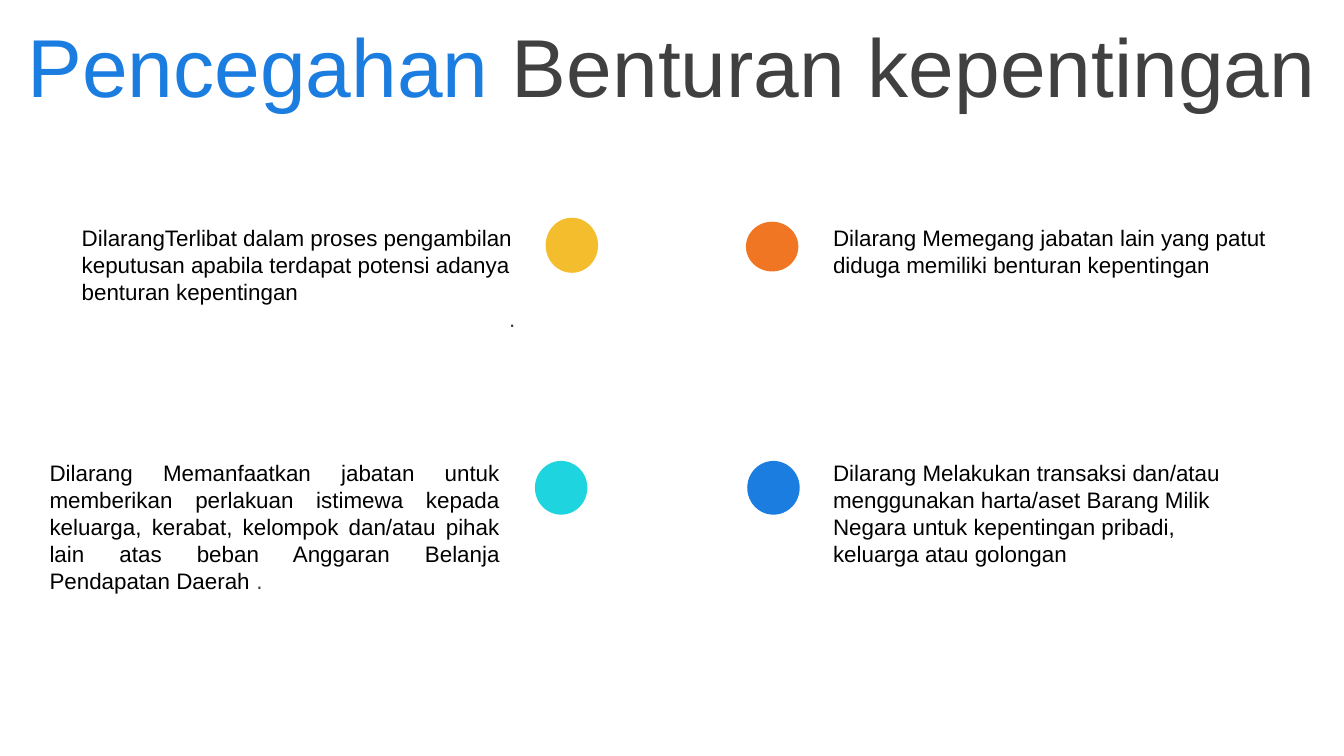
from pptx import Presentation
from pptx.dml.color import RGBColor
from pptx.enum.shapes import MSO_SHAPE
from pptx.enum.text import MSO_ANCHOR, MSO_AUTO_SIZE, PP_ALIGN
from pptx.util import Inches, Pt

LEFT, CENTER, RIGHT, JUSTIFY = PP_ALIGN.LEFT, PP_ALIGN.CENTER, PP_ALIGN.RIGHT, PP_ALIGN.JUSTIFY
MIDDLE, TOP = MSO_ANCHOR.MIDDLE, MSO_ANCHOR.TOP
GROW, FIXED = MSO_AUTO_SIZE.SHAPE_TO_FIT_TEXT, MSO_AUTO_SIZE.NONE
OVAL = MSO_SHAPE.OVAL

THEME = {
    "font": "Arial", "title": 44, "body": 12,
    "blue": "1C7DE1", "dark": "404040", "black": "000000",
    "yellow": "F4BD2D", "orange": "F07624", "cyan": "1ED4DE",
}

TITLE = [(CENTER, [("Pencegahan ", "blue"), ("Benturan kepentingan", "dark")])]

RULES = [
    {"box": (0.51, 1.62, 3.47, 0.91), "dot": (4.06, 1.62, 0.39, 0.41), "color": "yellow",
     "text": [(LEFT, [("DilarangTerlibat dalam proses pengambilan keputusan apabila "
                       "terdapat potensi adanya benturan kepentingan", "black")]),
              (RIGHT, [(". ", "dark")])]},
    {"box": (6.1, 1.62, 3.46, 0.71), "dot": (5.55, 1.65, 0.39, 0.37), "color": "orange",
     "text": [(LEFT, [("Dilarang Memegang jabatan lain yang patut diduga memiliki "
                       "benturan kepentingan", "black")])]},
    {"box": (0.27, 3.37, 3.55, 0.91), "dot": (3.98, 3.43, 0.39, 0.4), "color": "cyan",
     "text": [(JUSTIFY, [("Dilarang Memanfaatkan jabatan untuk memberikan perlakuan "
                          "istimewa kepada keluarga, kerabat, kelompok dan/atau pihak lain "
                          "atas beban Anggaran Belanja Pendapatan Daerah ", "black"),
                         (". ", "dark")])]},
    {"box": (6.1, 3.37, 3.39, 0.91), "dot": (5.56, 3.43, 0.39, 0.4), "color": "blue",
     "text": [(LEFT, [("Dilarang Melakukan transaksi dan/atau menggunakan harta/aset "
                       "Barang Milik Negara untuk kepentingan pribadi, keluarga atau "
                       "golongan", "black")])]},
]


def rgb(name):
    return RGBColor.from_string(THEME[name])


def add_text(slide, box, paragraphs, size, frame):
    tf = slide.shapes.add_textbox(*map(Inches, box)).text_frame
    for name, value in {"word_wrap": True, **frame}.items():
        setattr(tf, name, value)
    for i, (align, runs) in enumerate(paragraphs):
        p = tf.add_paragraph() if i else tf.paragraphs[0]
        p.alignment = align
        for text, color in runs:
            r = p.add_run()
            r.text = text
            for name, value in {"name": THEME["font"], "size": Pt(THEME[size])}.items():
                setattr(r.font, name, value)
            r.font.color.rgb = rgb(color)


def add_dot(slide, box, color):
    sp = slide.shapes.add_shape(OVAL, *map(Inches, box))
    sp.shadow.inherit = False
    sp.fill.solid()
    sp.fill.fore_color.rgb = rgb(color)
    sp.line.fill.background()


def main():
    prs = Presentation()
    prs.slide_width = Inches(10)
    prs.slide_height = prs.slide_width * 9 // 16
    s = prs.slides.add_slide(prs.slide_layouts[6])
    add_text(s, (0, 0, 10, 0.97), TITLE, "title", {"vertical_anchor": MIDDLE, "auto_size": FIXED})
    for rule in RULES:
        add_dot(s, rule["dot"], rule["color"])
    for rule in RULES:
        add_text(s, rule["box"], rule["text"], "body", {"vertical_anchor": TOP, "auto_size": GROW})
    prs.save("out.pptx")


if __name__ == "__main__":
    main()
